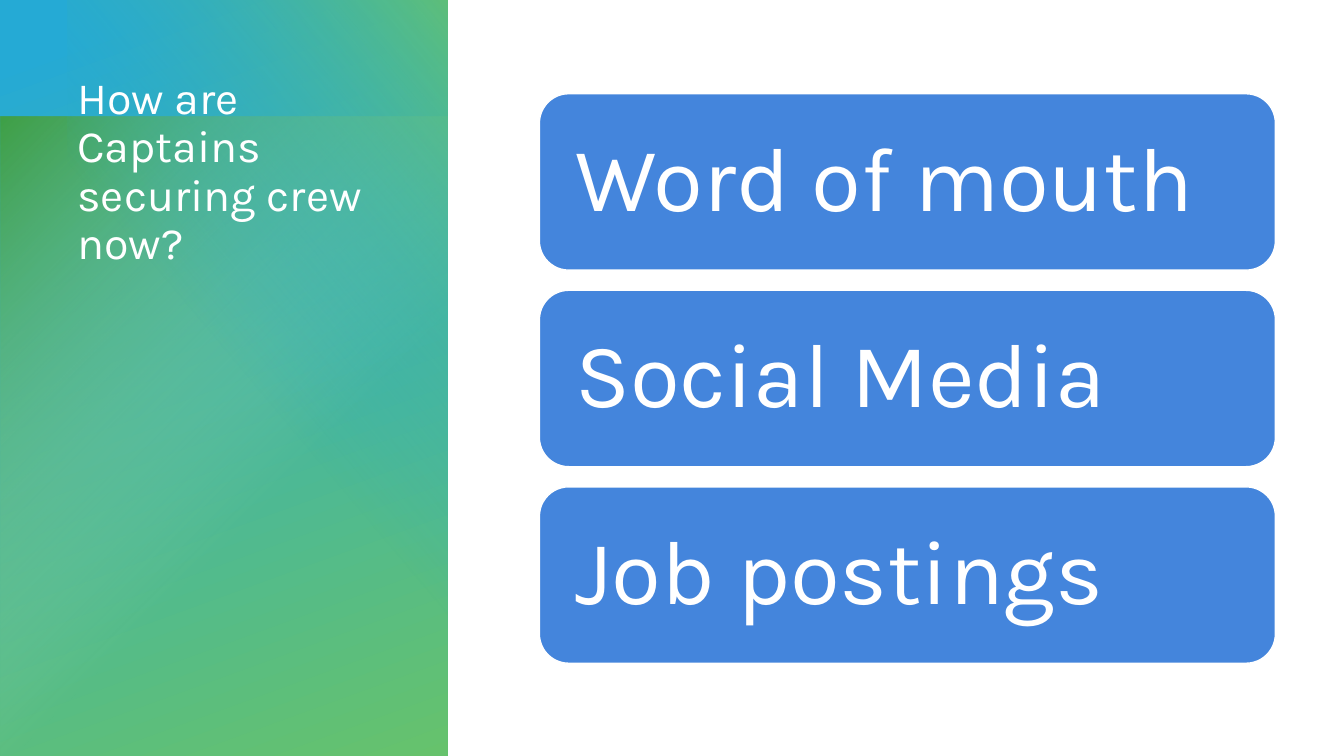
import lxml.etree
import pptx
import pptx.dml.color
import pptx.enum.shapes
import pptx.enum.text
import pptx.oxml.ns
import pptx.util

WHITE = pptx.dml.color.RGBColor(0xFF, 0xFF, 0xFF)
CARD_BLUE = pptx.dml.color.RGBColor(0x44, 0x85, 0xDC)
SKY = pptx.dml.color.RGBColor(0x25, 0xAA, 0xD5)
LEAF = pptx.dml.color.RGBColor(0x66, 0xC2, 0x6C)
FOREST = pptx.dml.color.RGBColor(0x3F, 0x9F, 0x46)
MINT = pptx.dml.color.RGBColor(0xA3, 0xDA, 0xA7)

INCH = pptx.util.Inches(1)
SHAPES = pptx.enum.shapes.MSO_SHAPE
ANCHOR = pptx.enum.text.MSO_ANCHOR
qn = pptx.oxml.ns.qn

prs = pptx.Presentation()
prs.slide_width, prs.slide_height = int(13.33 * INCH), int(7.5 * INCH)
s = prs.slides.add_slide(prs.slide_layouts[6])


def add_box(kind, *box):
    sp = s.shapes.add_shape(kind, *(int(v * INCH) for v in box))
    sp.shadow.inherit = False
    return sp


def write(sp, text, size, anchor, inset):
    """Put one left-aligned line of white text into a shape."""
    tf = sp.text_frame
    frame = {"word_wrap": True, "vertical_anchor": anchor}
    frame.update({"margin_" + side: int(inset[i % 2] * INCH)
                  for i, side in enumerate(("left", "top", "right", "bottom"))})
    for name, value in frame.items():
        setattr(tf, name, value)
    p = tf.paragraphs[0]
    p.alignment = pptx.enum.text.PP_ALIGN.LEFT
    p.line_spacing = 0.9
    r = p.add_run()
    r.text = text
    for name, value in {"name": "Karla", "size": pptx.util.Pt(size)}.items():
        setattr(r.font, name, value)
    r.font.color.rgb = WHITE


# Side panel: box, rotation, gradient angle (None = from the corner),
# then stops as position, colour, opacity in percent
PANEL_W = 4.44
panel_layers = [
    ((0, 0, PANEL_W, 7.51), 0, 70, [(7, SKY, 100), (100, LEAF, 100)]),
    ((0, 1.16, PANEL_W, 6.35), 180, None, [(0, FOREST, 100), (60, MINT, 0)]),
    ((-0.57, 1.24, 6.25, 3.77), 270, 230, [(0, LEAF, 86), (57, SKY, 0)]),
]
for box, rotation, angle, stops in panel_layers:
    sp = add_box(SHAPES.RECTANGLE, *box)
    sp.rotation = rotation
    sp.line.fill.background()
    sp.fill.gradient()
    for stop, (position, color, _) in zip(sp.fill.gradient_stops, stops):
        stop.position = position / 100
        stop.color.rgb = color
    grad = sp._element.spPr.find(qn("a:gradFill"))
    for clr, (_, _, opacity) in zip(grad.iter(qn("a:srgbClr")), stops):
        if opacity < 100:
            lxml.etree.SubElement(clr, qn("a:alpha"), val=str(opacity * 1000))
    if angle is None:
        grad.remove(grad.find(qn("a:lin")))
        radial = lxml.etree.SubElement(grad, qn("a:path"), path="circle")
        lxml.etree.SubElement(radial, qn("a:fillToRect"), r="100000", b="100000")
    else:
        sp.fill.gradient_angle = 360 - angle

title = s.shapes.add_textbox(*(int(v * INCH) for v in (0.67, 0.7, 3.37, 4.39)))
write(title, "How are Captains securing crew now?", 32, ANCHOR.TOP, (0.1, 0.05))

# Answer cards
CARD_X, CARD_Y, CARD_W, CARD_H, PITCH = 5.35, 0.93, 7.3, 1.75, 1.95
for row, answer in enumerate(("Word of mouth", "Social Media", "Job postings")):
    sp = add_box(SHAPES.ROUNDED_RECTANGLE, CARD_X, CARD_Y + row * PITCH, CARD_W, CARD_H)
    sp.fill.solid()
    sp.fill.fore_color.rgb = CARD_BLUE
    sp.line.color.rgb = WHITE
    sp.line.width = pptx.util.Pt(1)
    # the rounded corners add about 0.09 to each inset
    write(sp, answer, 65, ANCHOR.MIDDLE, (0.27, 0.27))

prs.save("out.pptx")
